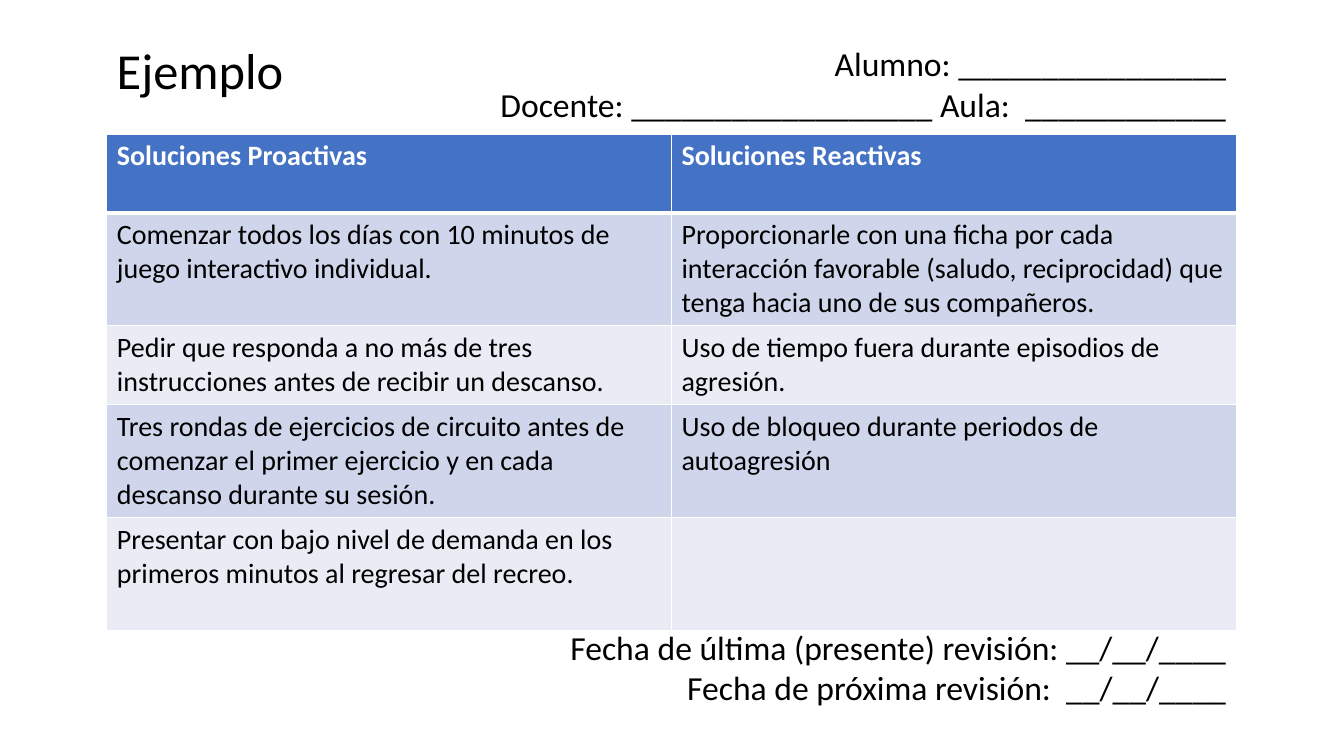
from lxml import etree
from pptx import Presentation
from pptx.dml.color import RGBColor
from pptx.enum.text import PP_ALIGN
from pptx.oxml.ns import qn
from pptx.util import Inches, Pt

LEFT, RIGHT = PP_ALIGN.LEFT, PP_ALIGN.RIGHT
FONT = "Calibri"
BLACK, WHITE, BLUE = "000000", "FFFFFF", "4472C4"
BANDS = ["CFD5EA", "E9EBF5"]
EDGE, WIDE = 1.06, 11.2

ROWS = [
    ("Soluciones Proactivas", "Soluciones Reactivas"),
    ("Comenzar todos los días con 10 minutos de juego interactivo individual.",
     "Proporcionarle con una ficha por cada interacción favorable "
     "(saludo, reciprocidad) que tenga hacia uno de sus compañeros."),
    ("Pedir que responda a no más de tres instrucciones antes de recibir un descanso.",
     "Uso de tiempo fuera durante episodios de agresión."),
    ("Tres rondas de ejercicios de circuito antes de comenzar el primer ejercicio "
     "y en cada descanso durante su sesión.",
     "Uso de bloqueo durante periodos de autoagresión"),
    ("Presentar con bajo nivel de demanda en los primeros minutos al regresar del recreo.",
     ""),
]
HEIGHTS = [0.78, 1.12, 0.78, 1.12, 1.12]

# top, width, height, size, alignment, lines
TEXTS = [
    (0.34, 3.94, 0.71, 36, LEFT, ["Ejemplo"]),
    (6.17, WIDE, 0.91, 24, RIGHT, ["Fecha de última (presente) revisión: __/__/____",
                                   "Fecha de próxima revisión:  __/__/____"]),
    (0.38, WIDE, 0.91, 24, RIGHT, ["Alumno: ________________",
                                   "Docente: __________________ Aula:  ____________"]),
]


def rgb(code):
    return RGBColor.from_string(code)


def write(para, text, size, color=BLACK, bold=False):
    run = para.add_run()
    run.text = text
    font = run.font
    font.name, font.size, font.bold = FONT, Pt(size), bold
    font.color.rgb = rgb(color)


def border(cell, side, width):
    line = etree.SubElement(cell._tc.get_or_add_tcPr(), qn("a:" + side), w=str(Pt(width)))
    fill = etree.SubElement(line, qn("a:solidFill"))
    etree.SubElement(fill, qn("a:srgbClr"), val=WHITE)


def add_grid(slide):
    frame = slide.shapes.add_table(len(ROWS), 2, Inches(EDGE), Inches(1.33),
                                   Inches(WIDE), Inches(sum(HEIGHTS)))
    table = frame.table
    for r, (texts, height) in enumerate(zip(ROWS, HEIGHTS)):
        head = r == 0
        table.rows[r].height = Inches(height)
        for c, text in enumerate(texts):
            cell = table.cell(r, c)
            for side in ("lnL", "lnR", "lnT", "lnB"):
                thick = (head and side == "lnB") or (r == 1 and side == "lnT")
                border(cell, side, 3 if thick else 1)
            cell.fill.solid()
            cell.fill.fore_color.rgb = rgb(BLUE if head else BANDS[(r - 1) % 2])
            if text:
                write(cell.text_frame.paragraphs[0], text, 20,
                      WHITE if head else BLACK, head)


def add_text(slide, top, width, height, size, align, lines):
    box = slide.shapes.add_textbox(Inches(EDGE), Inches(top), Inches(width), Inches(height))
    frame = box.text_frame
    frame.word_wrap = True
    for i, line in enumerate(lines):
        para = frame.add_paragraph() if i else frame.paragraphs[0]
        para.alignment = align
        write(para, line, size)


def main():
    deck = Presentation()
    deck.slide_width, deck.slide_height = Inches(13.33), Inches(7.5)
    slide = deck.slides.add_slide(deck.slide_layouts[6])
    add_grid(slide)
    for item in TEXTS:
        add_text(slide, *item)
    deck.save("out.pptx")


if __name__ == "__main__":
    main()
